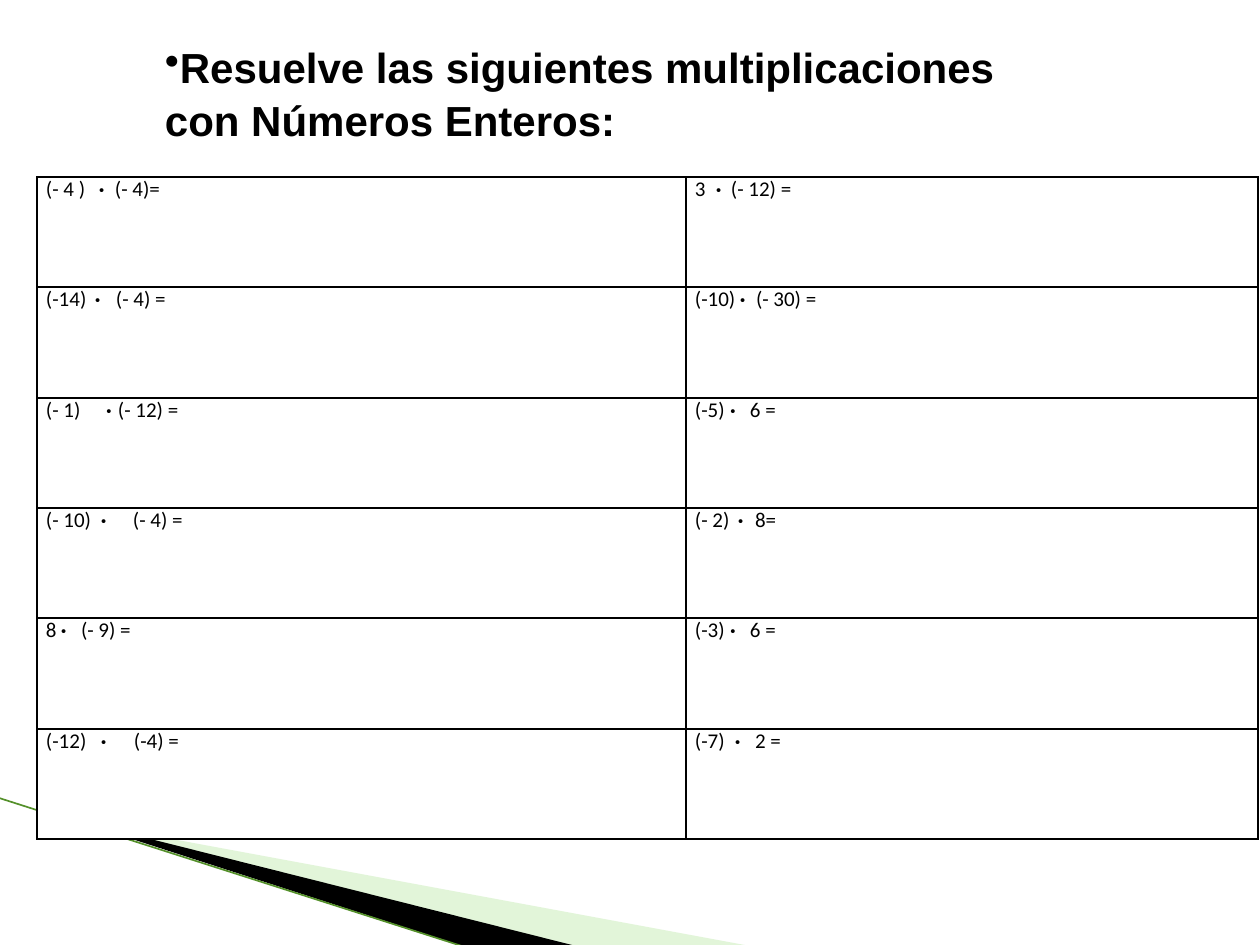
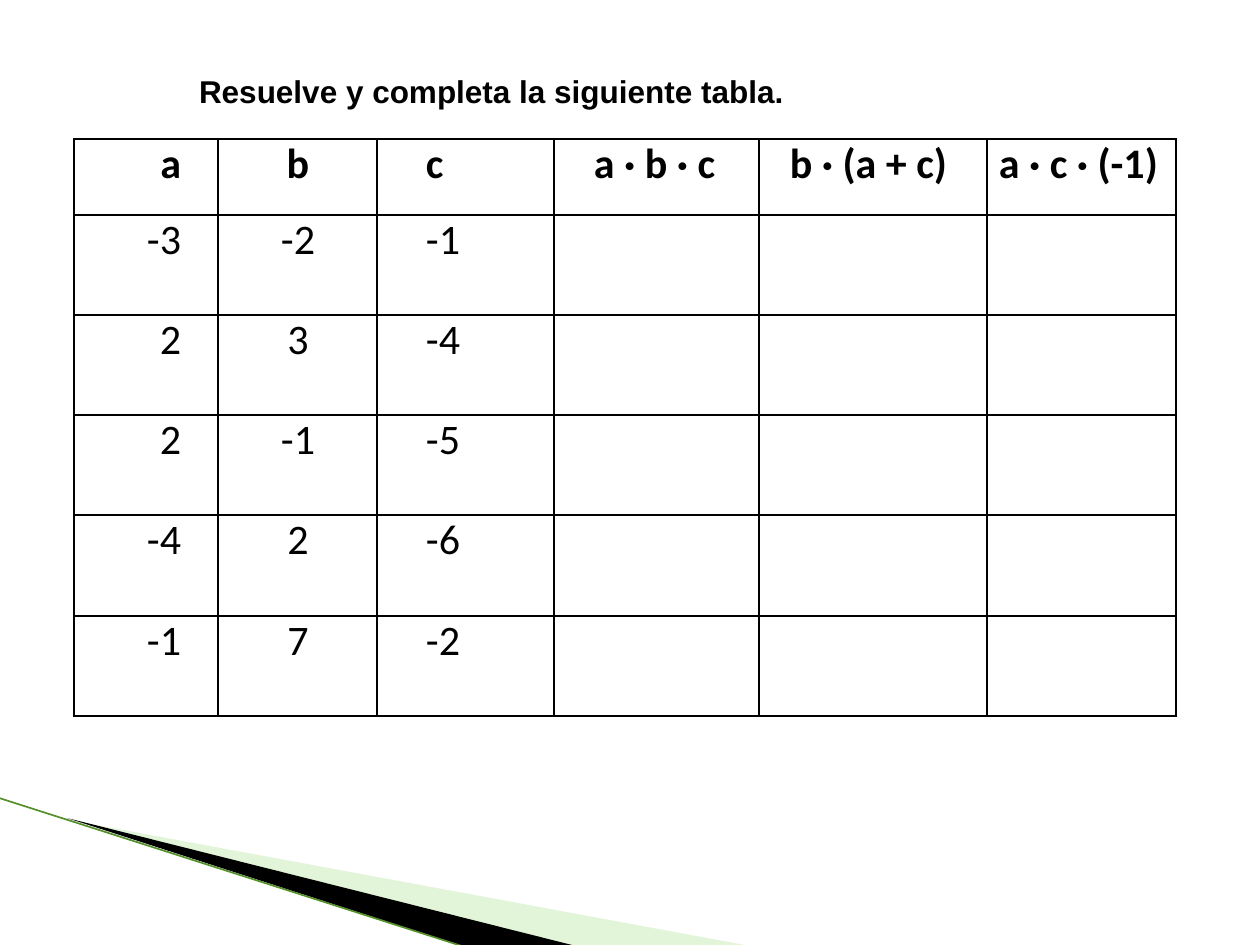
from dataclasses import dataclass

from lxml.etree import SubElement
from pptx import Presentation
from pptx.dml.color import RGBColor
from pptx.enum.shapes import MSO_CONNECTOR
from pptx.enum.text import MSO_ANCHOR, PP_ALIGN
from pptx.oxml.ns import qn
from pptx.util import Emu, Pt

EMU_PER_PX = 914400 / 126


@dataclass(frozen=True)
class Theme:
    ink: RGBColor = RGBColor(0x00, 0x00, 0x00)
    paper: RGBColor = RGBColor(0xFF, 0xFF, 0xFF)
    pale_green: RGBColor = RGBColor(0xB8, 0xE7, 0xA1)
    line_green: RGBColor = RGBColor(0x54, 0x90, 0x2A)
    title_font: str = "Arial"
    table_font: str = "Calibri"
    large: int = 24
    medium: int = 18
    small: int = 12
    border: int = 1


THEME = Theme()

# Each exercise: left factor, right factor, tab stops of the dot and right factor
EXERCISES = [
    [("(- 4 )", "(- 4)=", 53, 69), ("3", "(- 12) =", 21, 36)],
    [("(-14)", "(- 4) =", 49, 70), ("(-10)", "(- 30) =", 45, 61)],
    [("(- 1)", "(- 12) =", 60, 72), ("(-5)", "6 =", 35, 55)],
    [("(- 10)", "(- 4) =", 55, 87), ("(- 2)", "8=", 43, 60)],
    [("8", "(- 9) =", 15, 35), ("(-3)", "6 =", 35, 55)],
    [("(-12)", "(-4) =", 55, 88), ("(-7)", "2 =", 40, 60)],
]
HEADINGS = ["a", "b", "c", "a · b · c", "b · (a + c)", "a · c · (-1)"]
VALUES = [(-3, -2, -1), (2, 3, -4), (2, -1, -5), (-4, 2, -6), (-1, 7, -2)]


def px(length):
    return Emu(round(length * EMU_PER_PX))


def format_font(font, name, size, bold=False):
    font.name = name
    font.size = Pt(size)
    font.bold = bold
    font.color.rgb = THEME.ink


# Shared band at the foot of every slide
def add_triangle(slide, points, color, opacity=100):
    builder = slide.shapes.build_freeform(*points[0], scale=EMU_PER_PX)
    builder.add_line_segments(points[1:], close=True)
    shape = builder.convert_to_shape()
    shape.shadow.inherit = False
    shape.line.fill.background()
    shape.fill.solid()
    shape.fill.fore_color.rgb = color
    if opacity < 100:
        color_element = shape._element.spPr.find(".//" + qn("a:srgbClr"))
        SubElement(color_element, qn("a:alpha"), val=str(opacity * 1000))


def add_band(slide, left, top):
    def place(*points):
        return [(left + x, top + y) for x, y in points]

    add_triangle(slide, place((69, 22), (750, 148), (575, 148)), THEME.pale_green, 40)
    add_triangle(slide, place((67, 20), (576, 148), (469, 150)), THEME.ink)
    (start_x, start_y), (end_x, end_y) = place((-1, 0), (468, 150))
    line = slide.shapes.add_connector(
        MSO_CONNECTOR.STRAIGHT, px(start_x), px(start_y), px(end_x), px(end_y)
    )
    line.line.color.rgb = THEME.line_green
    line.line.width = Pt(0.95)
    SubElement(line._element.spPr, qn("a:effectLst"))


# Titles
def add_title(slide, box, lines, size, bullet=False):
    shape = slide.shapes.add_textbox(*map(px, box))
    frame = shape.text_frame
    frame.word_wrap = True
    frame.vertical_anchor = MSO_ANCHOR.TOP
    frame.margin_left = frame.margin_right = frame.margin_top = frame.margin_bottom = 0
    frame.text = "\n".join(lines)
    for index, paragraph in enumerate(frame.paragraphs):
        if index:
            paragraph.space_before = Pt(1.5)
        elif bullet:
            properties = paragraph._p.get_or_add_pPr()
            properties.set("marL", "0")
            properties.set("indent", "0")
            SubElement(properties, qn("a:buChar"), char="•")
        for run in paragraph.runs:
            format_font(run.font, THEME.title_font, size, bold=True)


# Tables
def add_borders(cell):
    properties = cell._tc.get_or_add_tcPr()
    for index, side in enumerate(("lnL", "lnR", "lnT", "lnB")):
        border = properties.makeelement(qn(f"a:{side}"), {"w": str(Pt(THEME.border))})
        fill = SubElement(border, qn("a:solidFill"))
        SubElement(fill, qn("a:srgbClr"), val=str(THEME.ink))
        properties.insert(index, border)


def add_grid(slide, left, top, widths, heights):
    table = slide.shapes.add_table(
        len(heights), len(widths), px(left), px(top), px(sum(widths)), px(sum(heights))
    ).table
    table.first_row = table.horz_banding = False
    for column, width in zip(table.columns, widths):
        column.width = px(width)
    for row, height in zip(table.rows, heights):
        row.height = px(height)
    for cell in table.iter_cells():
        cell.margin_left = cell.margin_right = cell.margin_top = cell.margin_bottom = 0
        cell.fill.solid()
        cell.fill.fore_color.rgb = THEME.paper
        add_borders(cell)
    return table


def fill_exercise(cell, left_factor, right_factor, *stops):
    cell.margin_left = px(9)
    paragraph = cell.text_frame.paragraphs[0]
    tabs = SubElement(paragraph._p.get_or_add_pPr(), qn("a:tabLst"))
    for stop in stops:
        SubElement(tabs, qn("a:tab"), pos=str(px(stop)), algn="l")
    for text in (left_factor + "\t", "·", "\t" + right_factor):
        run = paragraph.add_run()
        run.text = text
        format_font(run.font, THEME.table_font, THEME.small, bold=text == "·")


def fill_value(cell, text, alignment, indent, bold):
    if alignment == PP_ALIGN.RIGHT:
        cell.margin_right = px(indent)
    else:
        cell.margin_left = px(indent)
    paragraph = cell.text_frame.paragraphs[0]
    paragraph.text = text
    paragraph.alignment = alignment
    for run in paragraph.runs:
        format_font(run.font, THEME.table_font, THEME.large, bold)


def add_exercise_table(slide, left, top):
    table = add_grid(slide, left, top, (649, 572), (110, 111, 110) * 2)
    for row_index, exercises in enumerate(EXERCISES):
        for column_index, exercise in enumerate(exercises):
            fill_exercise(table.cell(row_index, column_index), *exercise)


def add_value_table(slide, left, top):
    widths = (144, 159, 177, 205, 228, 189)
    table = add_grid(slide, left, top, widths, (76, 100, 100, 100, 101, 100))
    alignments = [PP_ALIGN.RIGHT, PP_ALIGN.CENTER] + [PP_ALIGN.LEFT] * 4
    indents = (37, 1, 49, 40, 31, 12)
    for row_index, row in enumerate([HEADINGS, *VALUES]):
        for column_index, value in enumerate(row):
            fill_value(
                table.cell(row_index, column_index),
                str(value),
                alignments[column_index],
                indents[column_index],
                bold=row_index == 0,
            )


# Slides
def add_slide(presentation):
    slide = presentation.slides.add_slide(presentation.slide_layouts[6])
    add_band(slide, 0, 798)
    return slide


def build_multiplication_slide(presentation):
    slide = add_slide(presentation)
    add_exercise_table(slide, 37, 177)
    lines = ["Resuelve las siguientes multiplicaciones", "con Números Enteros:"]
    add_title(slide, (165, 41, 1060, 110), lines, THEME.large, bullet=True)


def build_completion_slide(presentation):
    slide = add_slide(presentation)
    add_value_table(slide, 74, 139)
    lines = ["Resuelve y completa la siguiente tabla."]
    add_title(slide, (199, 72, 1000, 40), lines, THEME.medium)


def main():
    presentation = Presentation()
    presentation.slide_width = px(1260)
    presentation.slide_height = px(945)
    build_multiplication_slide(presentation)
    build_completion_slide(presentation)
    presentation.save("out.pptx")


if __name__ == "__main__":
    main()
